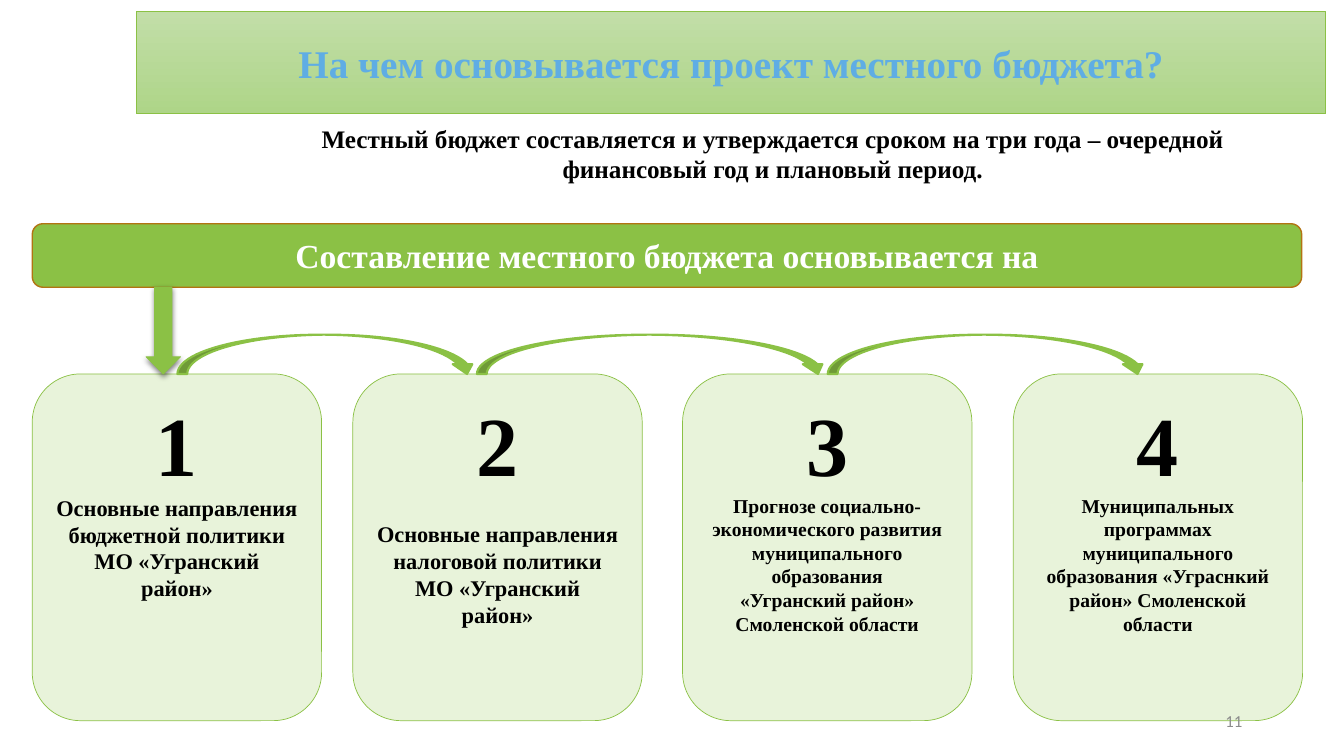
from itertools import pairwise
from lxml import etree
from pptx import Presentation
from pptx.dml.color import RGBColor as RGB
from pptx.enum.shapes import MSO_SHAPE as Shape
from pptx.enum.text import MSO_ANCHOR as Anchor, PP_ALIGN as Align
from pptx.oxml import parse_xml
from pptx.util import Inches, Pt

TITLE = "На чем основывается проект местного бюджета?"
INTRO = ("Местный бюджет составляется и утверждается сроком на три года – "
         "очередной финансовый год и плановый период.")
BASIS = "Составление местного бюджета основывается на"
# text size, space above the text, paragraphs
CARDS = [
    (16, 0, ["Основные направления бюджетной политики МО «Угранский район»"]),
    (16, 19, ["Основные направления налоговой политики МО «Угранский район»"]),
    (14, 0, ["Прогнозе социально-экономического развития муниципального образования",
             "«Угранский район» Смоленской области"]),
    (14, 0, ["Муниципальных программах муниципального образования "
             "«Уграснкий район» Смоленской области"]),
]
PAGE = "11"

GREEN = RGB(0x8B, 0xC1, 0x45)
PALE = RGB(0xE8, 0xF3, 0xDA)
TOP = RGB(0xC2, 0xDE, 0xA8)
BASE = RGB(0xAE, 0xD5, 0x88)
BROWN = RGB(0xB2, 0x74, 0x12)
BLUE = RGB(0x5F, 0xAD, 0xE4)
GRAY = RGB(0x8C, 0x8C, 0x8C)
BLACK = RGB(0, 0, 0)
WHITE = RGB(255, 255, 255)
SERIF = "Times New Roman"

WIDE, HIGH = 13.33, 7.5
EDGE = 0.32
BAR_Y, BAR_H = 2.22, 0.63
CARD_X = [EDGE, 3.5, 6.77, 10.05]
CARD_Y, CARD_W, CARD_H = 3.71, 2.87, 3.44
HOPS = [1.76, 4.73, 8.21, 11.38]
HOP_H = 0.39
SHADE = """<a:effectLst xmlns:a="http://schemas.openxmlformats.org/drawingml/2006/main">
<a:outerShdw blurRad="50800" dist="25400" dir="5400000" rotWithShape="0">
<a:srgbClr val="000000"><a:alpha val="50000"/></a:srgbClr>
</a:outerShdw></a:effectLst>"""

deck = Presentation()
deck.slide_width, deck.slide_height = Inches(WIDE), Inches(HIGH)
slide = deck.slides.add_slide(deck.slide_layouts[6])


def draw(kind, box, fill, line, width):
    item = slide.shapes.add_shape(kind, *map(Inches, box))
    item.shadow.inherit = False
    item.fill.solid()
    item.fill.fore_color.rgb = fill
    item.line.color.rgb = line
    item.line.width = Pt(width)
    return item


def label(box):
    return slide.shapes.add_textbox(*map(Inches, box))


def write(item, rows, anchor=Anchor.MIDDLE, align=Align.CENTER, face=SERIF, bold=True):
    """Fill a shape with rows of (text, size, colour, space above)."""
    frame = item.text_frame
    frame.word_wrap = True
    frame.vertical_anchor = anchor
    for n, (text, size, tint, gap) in enumerate(rows):
        para = frame.add_paragraph() if n else frame.paragraphs[0]
        para.alignment = align
        if gap:
            para.space_before = Pt(gap)
        run = para.add_run()
        run.text = text
        font = run.font
        font.name, font.size, font.bold = face, Pt(size), bold
        font.color.rgb = tint


head = draw(Shape.RECTANGLE, (1.35, 0.11, 11.8, 1.02), TOP, GREEN, 0.5)
head.fill.gradient()
head.fill.gradient_angle = 270
for stop, tint in zip(head.fill.gradient_stops, (TOP, BASE)):
    stop.color.rgb = tint
write(head, [(TITLE, 28, BLUE, 0)])

write(label((2.63, 1.17, 10.07, 0.7)), [(INTRO, 18, BLACK, 0)], Anchor.TOP)

bar = draw(Shape.ROUNDED_RECTANGLE, (EDGE, BAR_Y, 12.59, BAR_H), GREEN, BROWN, 1)
write(bar, [(BASIS, 24, WHITE, 0)])

for n, (left, (size, gap, texts)) in enumerate(zip(CARD_X, CARDS), 1):
    card = draw(Shape.ROUNDED_RECTANGLE, (left, CARD_Y, CARD_W, CARD_H), PALE, GREEN, 0.5)
    rows = [(text, size, BLACK, 0 if k else gap) for k, text in enumerate(texts)]
    write(card, [(str(n), 60, BLACK, 0)] + rows, Anchor.TOP)

bar_end = BAR_Y + BAR_H
drop = draw(Shape.DOWN_ARROW, (1.45, bar_end, 0.34, CARD_Y - bar_end), GREEN, GREEN, 0.75)
props = drop.element.spPr
for old in props.findall("{*}effectLst"):
    props.replace(old, parse_xml(SHADE))

for start, end in pairwise(HOPS):
    draw(Shape.CURVED_DOWN_ARROW, (start, CARD_Y - HOP_H, end - start, HOP_H),
         GREEN, GREEN, 1.5)

write(label((9.42, 6.95, 3, 0.4)), [(PAGE, 12, GRAY, 0)],
      align=Align.RIGHT, face="Calibri", bold=False)

deck.save("out.pptx")
